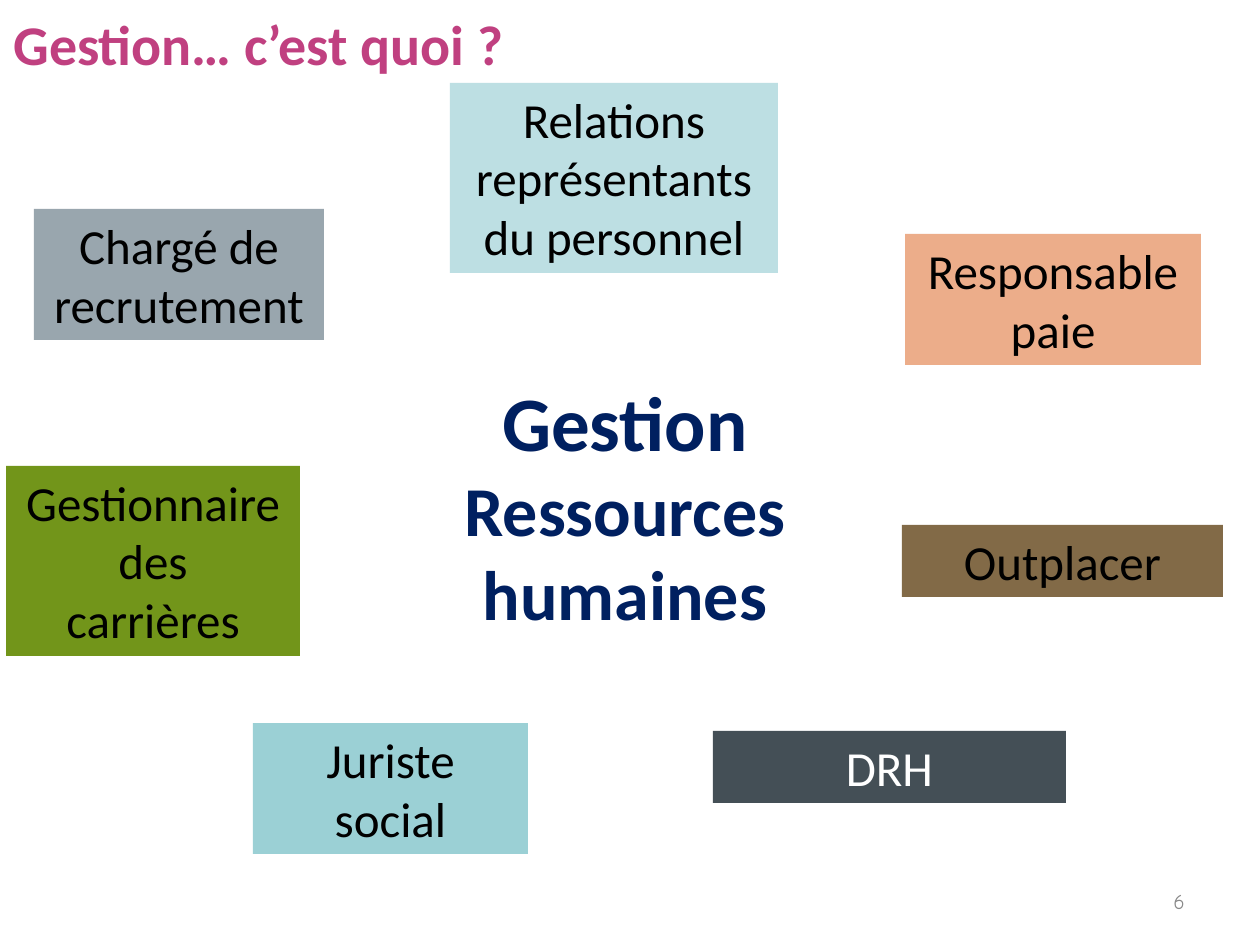
from pptx import Presentation
from pptx.dml.color import RGBColor
from pptx.enum.shapes import MSO_SHAPE
from pptx.enum.text import MSO_ANCHOR, PP_ALIGN
from pptx.util import Inches, Pt

RECTANGLE = MSO_SHAPE.RECTANGLE
TOP, MIDDLE = MSO_ANCHOR.TOP, MSO_ANCHOR.MIDDLE
LEFT, CENTER, RIGHT = PP_ALIGN.LEFT, PP_ALIGN.CENTER, PP_ALIGN.RIGHT
SCALE = Inches(1) / 126


def color(value):
    return RGBColor.from_string(value)


def write(shape, lines, sizes, text_color, alignment=CENTER, anchor=TOP, wrap=True, **font_format):
    frame = shape.text_frame
    frame.word_wrap = wrap
    frame.vertical_anchor = anchor
    frame.text = "\n".join(lines)
    for paragraph, size in zip(frame.paragraphs, sizes):
        paragraph.alignment = alignment
        font = paragraph.runs[0].font
        font.color.rgb = color(text_color)
        for name, value in {"name": "Calibri", "size": Pt(size), **font_format}.items():
            setattr(font, name, value)


presentation = Presentation()
presentation.slide_width = round(1260 * SCALE)
presentation.slide_height = round(945 * SCALE)
slide = presentation.slides.add_slide(presentation.slide_layouts[6])

texts = [
    ((903, 876, 294, 50), ["6"], [12], "898989",
     {"alignment": RIGHT, "anchor": MIDDLE, "name": "Comic Neue"}),
    ((450, 368, 350, 276), ["Gestion", "Ressources", "humaines"], [44, 40, 40], "002060",
     {"wrap": False, "bold": True}),
    ((1, 3, 520, 81), ["Gestion… c’est quoi ?"], [32], "C04080",
     {"alignment": LEFT, "wrap": False, "bold": True}),
]
for box, lines, sizes, text_color, text_format in texts:
    shape = slide.shapes.add_textbox(*(round(length * SCALE) for length in box))
    write(shape, lines, sizes, text_color, **text_format)

jobs = [
    ((34, 209, 290, 131), ["Chargé de recrutement"], "99A6AE", "000000"),
    ((6, 466, 294, 190), ["Gestionnaire des", "carrières"], "72951A", "000000"),
    ((713, 731, 353, 72), ["DRH"], "444F56", "FFFFFF"),
    ((905, 234, 296, 131), ["Responsable paie"], "ECAD8A", "000000"),
    ((253, 723, 275, 131), ["Juriste social"], "9BD0D5", "000000"),
    ((902, 525, 321, 72), ["Outplacer"], "826A47", "000000"),
    ((450, 83, 328, 190), ["Relations représentants du personnel"], "BDDFE3", "000000"),
]
for box, lines, fill_color, text_color in jobs:
    shape = slide.shapes.add_shape(RECTANGLE, *(round(length * SCALE) for length in box))
    shape.shadow.inherit = False
    shape.fill.solid()
    shape.fill.fore_color.rgb = color(fill_color)
    shape.line.fill.background()
    write(shape, lines, [28] * len(lines), text_color)

presentation.save("out.pptx")
